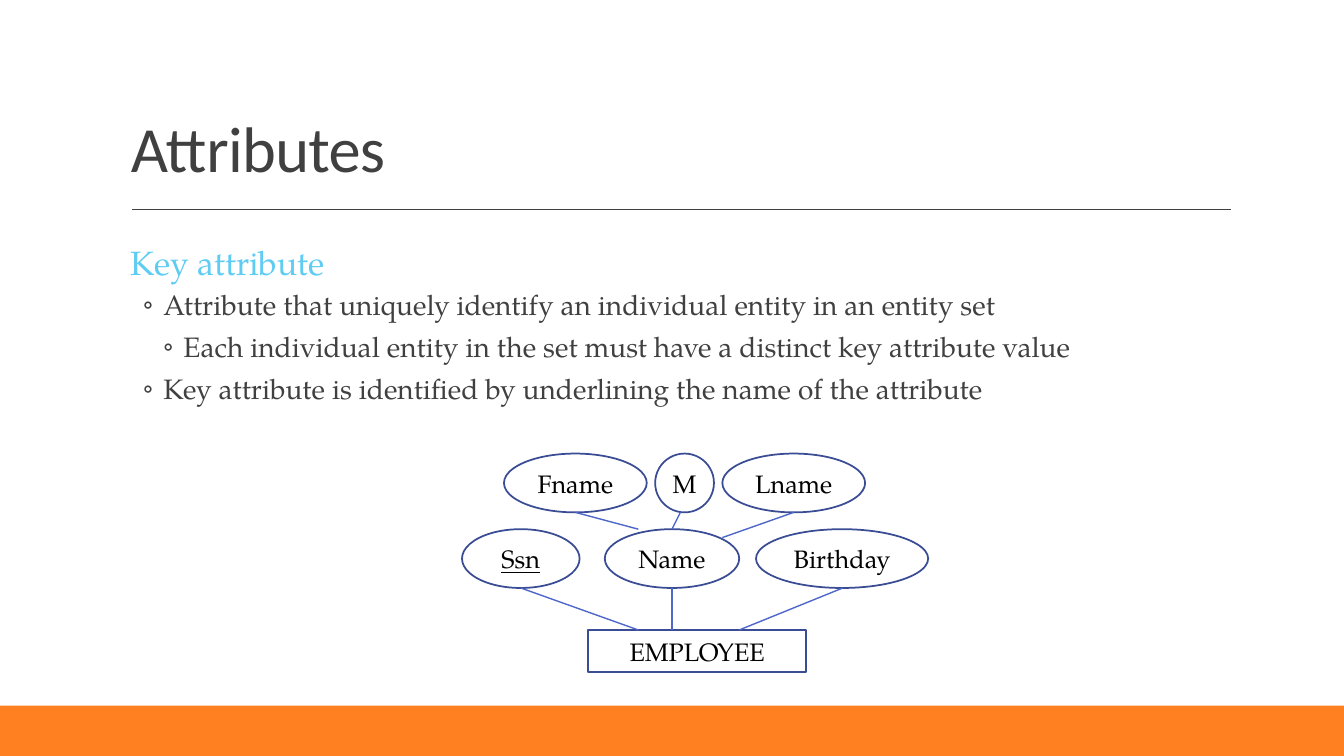
from lxml import etree
from pptx import Presentation
from pptx.dml.color import RGBColor
from pptx.enum import shapes, text
from pptx.oxml.ns import qn
from pptx.util import Pt

SERIF = "TeX Gyre Pagella"
GREY = "404040"
OUTLINE = "3A4C94"
LINK = "4E67C8"
RECTANGLE = shapes.MSO_SHAPE.RECTANGLE
OVAL = shapes.MSO_SHAPE.OVAL

# text, level, size, colour, line spacing, space before, space after
BODY = [
    ("Key attribute", 0, 24, "5ECCF3", 1.1, 12, 2),
    ("Attribute that uniquely identify an individual entity in an entity set",
     1, 20, GREY, 1.0, 2, 4),
    ("Each individual entity in the set must have a distinct key attribute value",
     2, 20, GREY, 1.0, 2, 4),
    ("Key attribute is identified by underlining the name of the attribute",
     1, 20, GREY, 1.0, 2, 4),
]
LEFT_MARGINS = [7.2, 30.24, 44.64]
HANGING = 14.4

NODE_HEIGHT = 42
NAME_PARTS_TOP = 324
ATTRIBUTES_TOP = 378
ENTITY_TOP = 450
NAME_PARTS = [("Fname", 360, 102), ("M", 468, 42), ("Lname", 516, 102)]
ATTRIBUTES = [("Ssn", 330, 84), ("Name", 432, 96), ("Birthday", 540, 123)]
NAME_PART_LINKS = [(411, 456, 378), (486, 480, 378), (567, 516, 384)]
ATTRIBUTE_LINKS = [(372, 456), (480, 480), (602, 528)]


def rgb(value):
    return RGBColor.from_string(value)


def set_font(font, name, size, colour):
    font.name = name
    font.size = Pt(size)
    font.color.rgb = rgb(colour)


def add_text_box(page, left, top, width, height, side_inset):
    box = page.shapes.add_textbox(Pt(left), Pt(top), Pt(width), Pt(height))
    frame = box.text_frame
    frame.word_wrap = True
    frame.margin_left = frame.margin_right = Pt(side_inset)
    return frame


def add_title(page, title):
    frame = add_text_box(page, 86.4, 22.6, 792, 114.2, 7.2)
    frame.vertical_anchor = text.MSO_ANCHOR.BOTTOM
    para = frame.paragraphs[0]
    para.line_spacing = 0.9
    set_font(para.font, "Calibri", 46, GREY)
    span = para.add_run()
    span.text = title
    span._r.get_or_add_rPr().set("spc", "-50")


def set_indent(para, level):
    """Indent the paragraph and give the lower levels a ring bullet."""
    properties = para._p.get_or_add_pPr()
    properties.set("marL", str(Pt(LEFT_MARGINS[level])))
    if level:
        properties.set("indent", str(-Pt(HANGING)))
        colour = etree.SubElement(properties, qn("a:buClr"))
        etree.SubElement(colour, qn("a:srgbClr"), val=LINK)
        etree.SubElement(properties, qn("a:buFont"), typeface="Calibri")
        etree.SubElement(properties, qn("a:buChar"), char="◦")


def add_body(page):
    frame = add_text_box(page, 86.4, 166.3, 792, 150, 0)
    for index, (words, level, size, colour, spacing, before, after) in enumerate(BODY):
        para = frame.add_paragraph() if index else frame.paragraphs[0]
        para.text = words
        para.level = level
        para.line_spacing = spacing
        para.space_before = Pt(before)
        para.space_after = Pt(after)
        set_indent(para, level)
        set_font(para.font, SERIF, size, colour)
        if level:
            bullet_colour = para._p.pPr.find(qn("a:buClr"))
            bullet_colour[0].set("val", GREY)


def add_panel(page, kind, left, top, width, height, fill):
    panel = page.shapes.add_shape(kind, Pt(left), Pt(top), Pt(width), Pt(height))
    panel.shadow.inherit = False
    panel.fill.solid()
    panel.fill.fore_color.rgb = rgb(fill)
    panel.line.fill.background()
    return panel


def add_node(page, kind, label, left, top, width, height=NODE_HEIGHT, is_key=False):
    node = add_panel(page, kind, left, top, width, height, "FFFFFF")
    node.line.color.rgb = rgb(OUTLINE)
    node.line.width = Pt(1.25)
    frame = node.text_frame
    frame.word_wrap = False
    frame.vertical_anchor = text.MSO_ANCHOR.MIDDLE
    para = frame.paragraphs[0]
    para.text = label
    para.alignment = text.PP_ALIGN.CENTER
    set_font(para.font, SERIF, 18, "000000")
    if is_key:
        para.runs[0].font.underline = True


def add_line(page, x1, y1, x2, y2, colour):
    line = page.shapes.add_connector(
        shapes.MSO_CONNECTOR.STRAIGHT, Pt(x1), Pt(y1), Pt(x2), Pt(y2))
    line.line.color.rgb = rgb(colour)
    line.line.width = Pt(1)
    etree.SubElement(line._element.spPr, qn("a:effectLst"))


def add_diagram(page):
    add_node(page, RECTANGLE, "EMPLOYEE", 420, ENTITY_TOP, 156, 30)
    for label, left, width in ATTRIBUTES:
        add_node(page, OVAL, label, left, ATTRIBUTES_TOP, width, is_key=label == "Ssn")
    for start, end in ATTRIBUTE_LINKS:
        add_line(page, start, ATTRIBUTES_TOP + NODE_HEIGHT, end, ENTITY_TOP, LINK)
    for label, left, width in NAME_PARTS:
        add_node(page, OVAL, label, left, NAME_PARTS_TOP, width)
    for start, end, bottom in NAME_PART_LINKS:
        add_line(page, start, NAME_PARTS_TOP + NODE_HEIGHT, end, bottom, LINK)


def main():
    deck = Presentation()
    deck.slide_width, deck.slide_height = Pt(960), Pt(540)
    page = deck.slides.add_slide(deck.slide_layouts[6])
    add_panel(page, RECTANGLE, 0, 504, 960, 36, "FF8021")
    add_line(page, 94, 149.5, 879, 149.5, GREY)
    add_title(page, "Attributes")
    add_body(page)
    add_diagram(page)
    deck.save("out.pptx")


if __name__ == "__main__":
    main()
